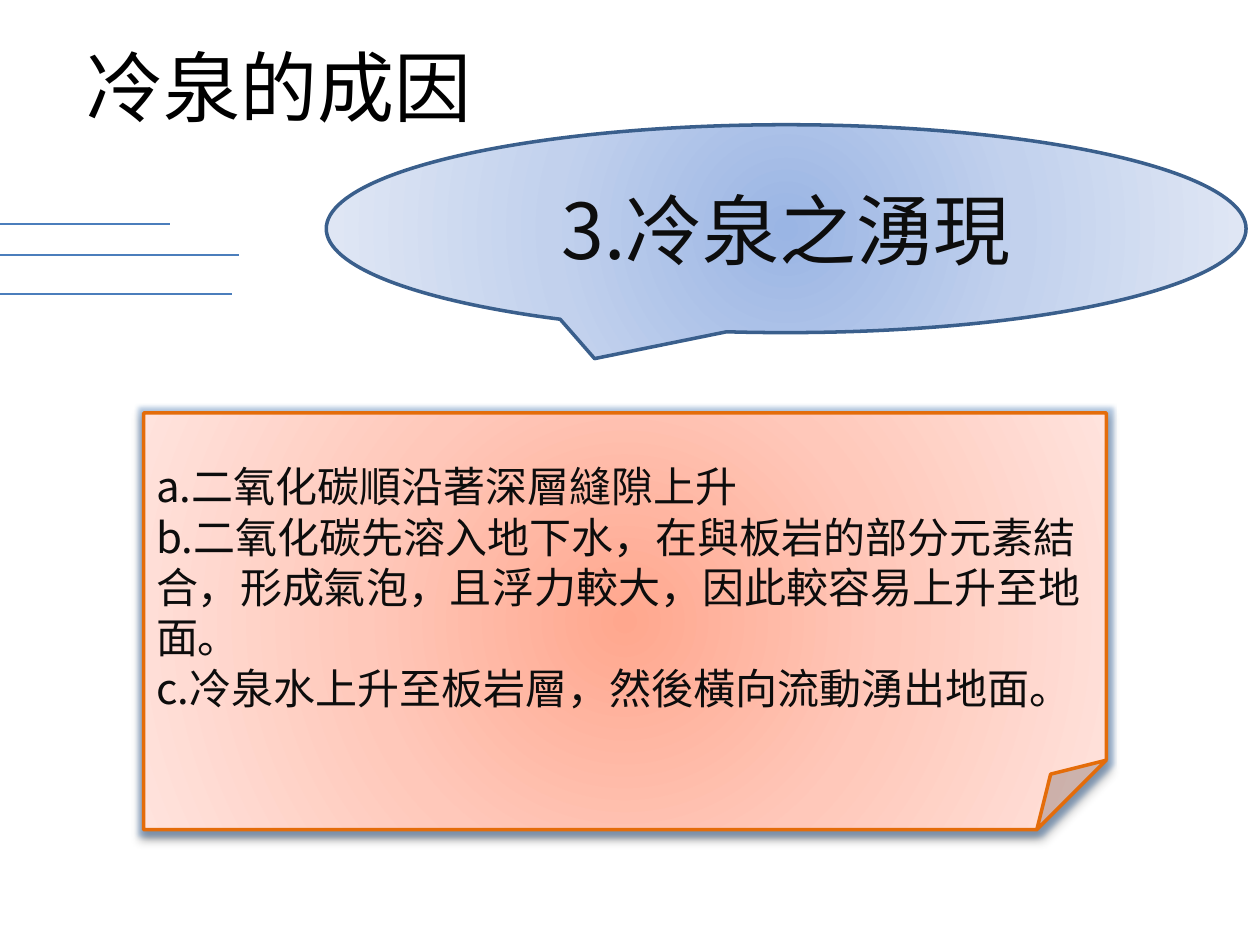
from dataclasses import dataclass

import pptx
import pptx.dml.color
import pptx.enum.shapes
import pptx.enum.text
import pptx.oxml
import pptx.oxml.ns
import pptx.util

FONT = "Noto Sans CJK SC"
NS = 'xmlns:a="http://schemas.openxmlformats.org/drawingml/2006/main"'
WIDE, HIGH = 10, 7.5
KIND = pptx.enum.shapes.MSO_SHAPE
ALIGN = pptx.enum.text.PP_ALIGN
MIDDLE = pptx.enum.text.MSO_ANCHOR.MIDDLE


@dataclass
class Panel:
    """A filled shape; box is left, top, width, height as shares of the slide."""
    kind: int
    box: tuple
    stops: tuple
    edge: str
    lines: tuple
    size: int
    align: int


@dataclass
class Stripe:
    start: float
    level: float


PANELS = (
    Panel(KIND.OVAL_CALLOUT, (.259, .132, .73, .22),
          ("9AB5E4", "C2D1ED", "E1E8F5"), "3A5F8C",
          ("3.冷泉之湧現",), 44, ALIGN.CENTER),
    Panel(KIND.FOLDED_CORNER, (.114, .437, .764, .441),
          ("FFA78E", "FFC8BA", "FFE3DD"), "E46C0A",
          ("a.二氧化碳順沿著深層縫隙上升",
           "b.二氧化碳先溶入地下水，在與板岩的部分元素結合，"
           "形成氣泡，且浮力較大，因此較容易上升至地面。",
           "c.冷泉水上升至板岩層，然後橫向流動湧出地面。"), 24, ALIGN.LEFT),
)
STRIPES = (Stripe(-.185, .237), Stripe(-.13, .27), Stripe(-.136, .311))
SPAN = .32
EFFECTS = (
    '<a:glow rad="63500"><a:srgbClr val="4F81BD"><a:alpha val="40000"/>'
    '</a:srgbClr></a:glow>'
    '<a:outerShdw blurRad="50800" dist="38100" dir="5400000">'
    '<a:srgbClr val="000000"><a:alpha val="40000"/></a:srgbClr></a:outerShdw>'
)


def color(text: str) -> pptx.dml.color.RGBColor:
    return pptx.dml.color.RGBColor.from_string(text)


def across(share: float) -> int:
    return pptx.util.Inches(share * WIDE)


def down(share: float) -> int:
    return pptx.util.Inches(share * HIGH)


def place(box: tuple) -> tuple:
    left, top, width, height = box
    return across(left), down(top), across(width), down(height)


def effects(shape, inner: str = "") -> None:
    """Replace the shape's effects, leaving none by default."""
    props = shape._element.spPr
    for old in props.findall(pptx.oxml.ns.qn("a:effectLst")):
        props.remove(old)
    props.append(pptx.oxml.parse_xml(
        f"<a:effectLst {NS}>{inner}</a:effectLst>"))


def radial(shape, stops: tuple) -> None:
    """Fill the shape with evenly spaced colours from its centre outwards."""
    step = 100000 // (len(stops) - 1)
    marks = "".join(
        f'<a:gs pos="{i * step}"><a:srgbClr val="{tone}"/></a:gs>'
        for i, tone in enumerate(stops))
    shape.fill.solid()
    props = shape._element.spPr
    solid = props.find(pptx.oxml.ns.qn("a:solidFill"))
    props.replace(solid, pptx.oxml.parse_xml(
        f'<a:gradFill {NS} rotWithShape="1"><a:gsLst>{marks}</a:gsLst>'
        '<a:path path="circle"><a:fillToRect l="50000" t="50000" r="50000" '
        'b="50000"/></a:path></a:gradFill>'))


def write(frame, lines: tuple, size: int, tone: str, align: int) -> None:
    frame.text = "\n".join(lines)
    frame.word_wrap = True
    frame.vertical_anchor = MIDDLE
    for para in frame.paragraphs:
        para.alignment = align
        font = para.font
        font.size = pptx.util.Pt(size)
        font.name = FONT
        font.color.rgb = color(tone)
        font._element.find(pptx.oxml.ns.qn("a:latin")).addnext(
            pptx.oxml.parse_xml(f'<a:ea {NS} typeface="{FONT}"/>'))


def draw_panel(slide, panel: Panel):
    shape = slide.shapes.add_shape(panel.kind, *place(panel.box))
    radial(shape, panel.stops)
    shape.line.color.rgb = color(panel.edge)
    shape.line.width = pptx.util.Pt(2)
    effects(shape)
    write(shape.text_frame, panel.lines, panel.size, "0D0D0D", panel.align)
    return shape


def draw_stripe(slide, stripe: Stripe) -> None:
    level = down(stripe.level)
    line = slide.shapes.add_connector(
        pptx.enum.shapes.MSO_CONNECTOR.STRAIGHT,
        across(stripe.start), level, across(stripe.start + SPAN), level)
    line.line.color.rgb = color("4B7EBC")
    line.line.width = pptx.util.Pt(.75)
    effects(line)


def main() -> None:
    deck = pptx.Presentation()
    deck.slide_width, deck.slide_height = across(1), down(1)
    slide = deck.slides.add_slide(deck.slide_layouts[5])
    title = slide.shapes.title
    title.left, title.top, title.width, title.height = place(
        (.028, .017, .387, .147))
    write(title.text_frame, ("冷泉的成因",), 44, "000000", ALIGN.CENTER)
    callout, note = [draw_panel(slide, panel) for panel in PANELS]
    callout.text_frame.paragraphs[0].space_before = pptx.util.Pt(9)
    effects(note, EFFECTS)
    for stripe in STRIPES:
        draw_stripe(slide, stripe)
    deck.save("out.pptx")


if __name__ == "__main__":
    main()
